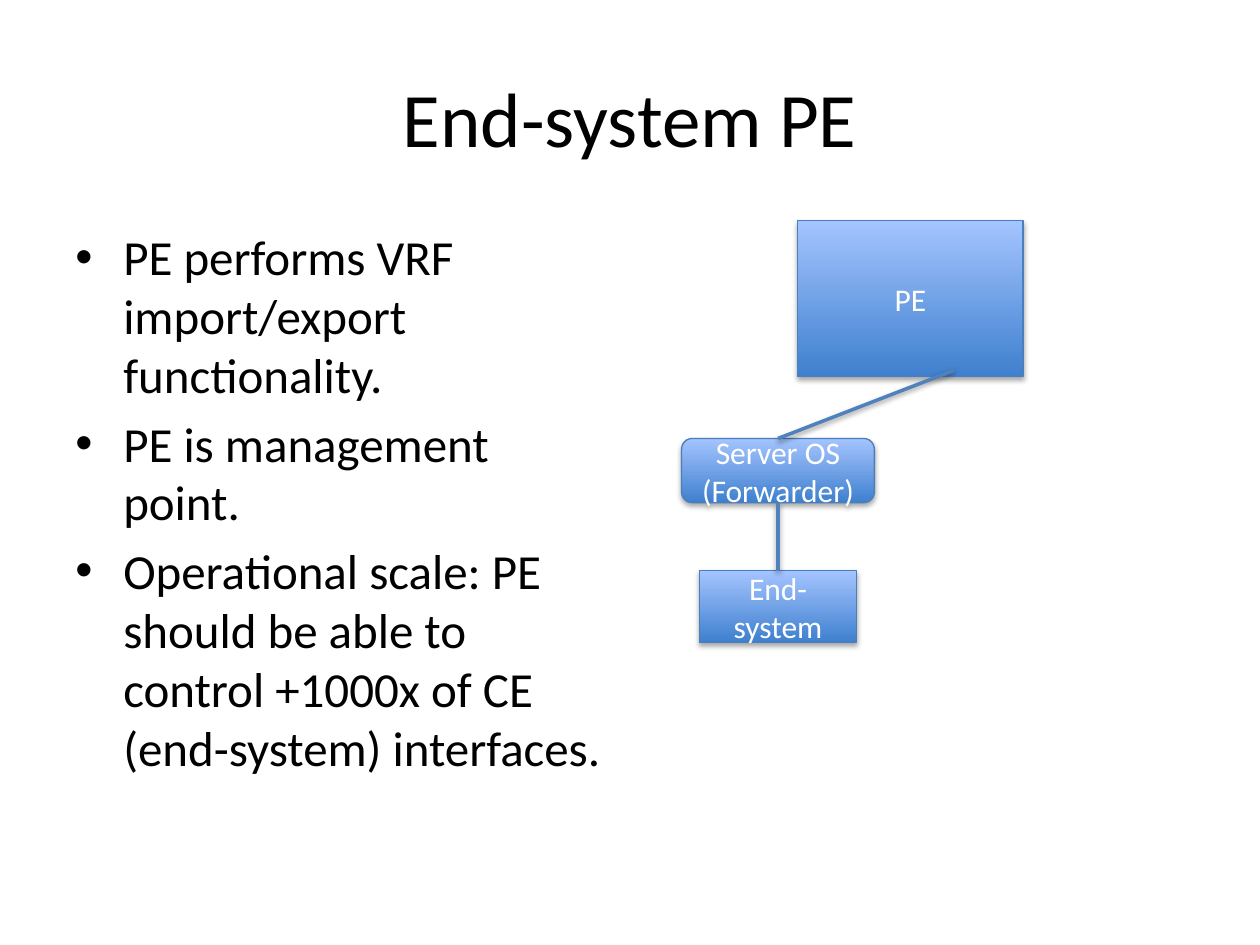
from lxml import etree
from pptx import Presentation
from pptx.dml.color import RGBColor
from pptx.enum import shapes, text
from pptx.oxml import ns
from pptx.util import Inches, Pt

HUES = {"ink": "000000", "white": "FFFFFF", "deep": "3F80CE", "pale": "A4C4FF",
        "edge": "4B7EBC", "link": "4F81BD"}
FONT = "Calibri"
POINTS = [
    "PE performs VRF import/export functionality.",
    "PE is management point.",
    "Operational scale: PE should be able to control +1000x of CE (end-system) interfaces.",
]


def hue(name):
    return RGBColor.from_string(HUES[name])


def add_tag(node, tag, **attrs):
    return etree.SubElement(node, ns.qn(tag), attrs)


def style(frame, size, color, align):
    frame.word_wrap = True
    for para in frame.paragraphs:
        para.alignment = align
        for run in para.runs:
            run.font.name, run.font.size = FONT, Pt(size)
            run.font.color.rgb = hue(color)


def add_shade(item, alpha, dist):
    """Cast a soft shadow straight down; the line must be set before."""
    props = item._element.spPr
    for old in props.findall(ns.qn("a:effectLst")):
        props.remove(old)
    shade = add_tag(add_tag(props, "a:effectLst"), "a:outerShdw",
                    blurRad=str(Pt(3.1)), dist=str(Pt(dist)), dir="5400000", rotWithShape="0")
    black = add_tag(shade, "a:srgbClr", val=HUES["ink"])
    add_tag(black, "a:alpha", val=str(alpha * 1000))


def add_title(slide, left, top, width, height):
    frame = slide.shapes.add_textbox(left, top, width, height).text_frame
    frame.text = "End-system PE"
    frame.vertical_anchor = text.MSO_ANCHOR.MIDDLE
    style(frame, 44, "ink", text.PP_ALIGN.CENTER)


def add_list(slide, left, top, width, height):
    frame = slide.shapes.add_textbox(left, top, width, height).text_frame
    frame.text = "\n".join(POINTS)
    style(frame, 28, "ink", text.PP_ALIGN.LEFT)
    indent = Inches(0.38)
    for para in frame.paragraphs:
        para.space_before = Pt(5.6)
        props = para._p.get_or_add_pPr()
        props.set("marL", str(indent))
        props.set("indent", str(-indent))
        add_tag(props, "a:buFont", typeface="Arial")
        add_tag(props, "a:buChar", char="•")


def add_node(slide, kind, label, left, top, width, height):
    node = slide.shapes.add_shape(kind, left, top, width, height)
    node.fill.gradient()
    node.fill.gradient_angle = 90
    for stop, name in zip(node.fill.gradient_stops, ("deep", "pale")):
        stop.color.rgb = hue(name)
    node.line.color.rgb = hue("edge")
    node.line.width = Pt(0.75)
    add_shade(node, 35, 1.8)
    node.text_frame.text = label
    node.text_frame.vertical_anchor = text.MSO_ANCHOR.MIDDLE
    style(node.text_frame, 18, "white", text.PP_ALIGN.CENTER)
    return node


def add_link(slide, start, x, y):
    """Run a line from the top of the start shape to a point."""
    link = slide.shapes.add_connector(shapes.MSO_CONNECTOR.STRAIGHT, 0, 0, x, y)
    link.begin_connect(start, 0)
    link.line.color.rgb = hue("link")
    link.line.width = Pt(2)
    add_shade(link, 38, 1.6)
    return link


def add_diagram(slide, left, top):
    rect, rounded = shapes.MSO_SHAPE.RECTANGLE, shapes.MSO_SHAPE.ROUNDED_RECTANGLE
    add_node(slide, rect, "PE", left + Inches(0.92), top, Inches(1.79), Inches(1.24))
    server = add_node(slide, rounded, "Server OS (Forwarder)", left, top + Inches(1.73),
                      Inches(1.53), Inches(0.51))
    width = Inches(1.25)
    system = add_node(slide, rect, "End-system", left + (server.width - width) // 2,
                      top + Inches(2.78), width, Inches(0.57))
    add_link(slide, server, left + Inches(2.16), top + Inches(1.19))
    add_link(slide, system, left, top).end_connect(server, 2)


def main():
    deck = Presentation()
    deck.slide_width, deck.slide_height = Inches(10), Inches(7.5)
    slide = deck.slides.add_slide(deck.slide_layouts[6])
    add_title(slide, Inches(0.5), Inches(0.3), Inches(9), Inches(1.25))
    add_list(slide, Inches(0.5), Inches(1.75), Inches(4.42), Inches(4.95))
    add_diagram(slide, Inches(5.41), Inches(1.75))
    deck.save("out.pptx")


if __name__ == "__main__":
    main()
